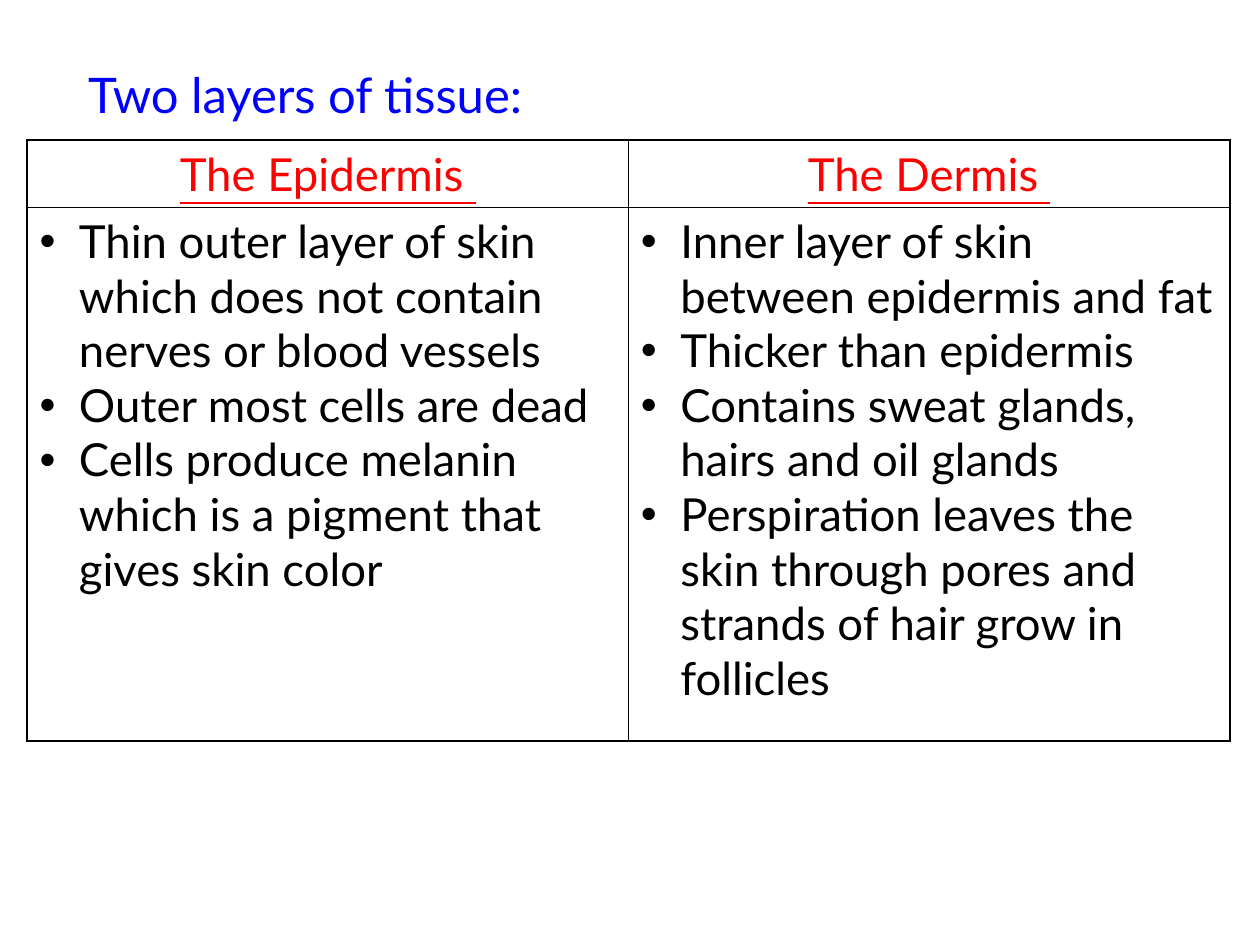
import pptx
import pptx.util
import pptx.dml.color
import pptx.enum.text
import pptx.oxml.ns
from lxml import etree

Pt = pptx.util.Pt
COLORS = {"title": "0000FF", "heading": "FF0000", "text": "000000", "border": "000000", "page": "FFFFFF"}
FONT = "Lato"
TITLE = "Two layers of tissue:"
LAYERS = [
    ("The Epidermis ", [
        "Thin outer layer of skin which does not contain nerves or blood vessels",
        "Outer most cells are dead",
        "Cells produce melanin which is a pigment that gives skin color",
    ]),
    ("The Dermis ", [
        "Inner layer of skin between epidermis and fat",
        "Thicker than epidermis",
        "Contains sweat glands, hairs and oil glands",
        "Perspiration leaves the skin through pores and strands of hair grow in follicles",
    ]),
]
TABLE_LEFT, TABLE_TOP = 15.4, 80
COLUMN_WIDTH = 343.7
ROW_HEIGHTS = [38.4, 305]
BULLET_INDENT = 22.5


def add_xml(parent, tag, **attributes):
    return etree.SubElement(parent, pptx.oxml.ns.qn(tag), attributes)


def style(para, size, color):
    para.font.name = FONT
    para.font.size = Pt(size)
    para.font.color.rgb = pptx.dml.color.RGBColor.from_string(COLORS[color])


def set_indent(para, indent, bullet=None):
    properties = para._p.get_or_add_pPr()
    properties.set("marL", str(Pt(indent)))
    properties.set("indent", str(Pt(-indent)))
    if bullet:
        add_xml(properties, "a:buFont", typeface="Arial")
        add_xml(properties, "a:buChar", char=bullet)
    else:
        add_xml(properties, "a:buNone")


def set_borders(cell):
    properties = cell._tc.get_or_add_tcPr()
    for side in ("a:lnL", "a:lnR", "a:lnT", "a:lnB"):
        line = add_xml(properties, side, w=str(Pt(1)))
        add_xml(add_xml(line, "a:solidFill"), "a:srgbClr", val=COLORS["border"])


def fill_cell(cell, lines, heading):
    set_borders(cell)
    cell.fill.background()
    frame = cell.text_frame
    frame.text = "\n".join(lines)
    for para in frame.paragraphs:
        if heading:
            para.alignment = pptx.enum.text.PP_ALIGN.CENTER
            para.font.underline = True
        else:
            set_indent(para, BULLET_INDENT, "•")
        style(para, 26, "heading" if heading else "text")


def main():
    deck = pptx.Presentation()
    deck.slide_width, deck.slide_height = Pt(720), Pt(540)
    page = deck.slides.add_slide(deck.slide_layouts[1])
    page.background.fill.solid()
    page.background.fill.fore_color.rgb = pptx.dml.color.RGBColor.from_string(COLORS["page"])
    empty_title = page.shapes.title._element
    empty_title.getparent().remove(empty_title)

    body = page.placeholders[1]
    body.left, body.top, body.width, body.height = Pt(43.2), Pt(33.1), Pt(633.6), Pt(433.6)
    body.text_frame.text = TITLE
    para = body.text_frame.paragraphs[0]
    para.space_before = Pt(20)
    set_indent(para, 0)
    style(para, 28, "title")

    table = page.shapes.add_table(
        len(ROW_HEIGHTS), len(LAYERS), Pt(TABLE_LEFT), Pt(TABLE_TOP),
        Pt(COLUMN_WIDTH * len(LAYERS)), Pt(sum(ROW_HEIGHTS))).table
    table.first_row = table.horz_banding = False
    for row, height in zip(table.rows, ROW_HEIGHTS):
        row.height = Pt(height)
    for index, (heading, facts) in enumerate(LAYERS):
        table.columns[index].width = Pt(COLUMN_WIDTH)
        fill_cell(table.cell(0, index), [heading], True)
        fill_cell(table.cell(1, index), facts, False)

    deck.save("out.pptx")


if __name__ == "__main__":
    main()
